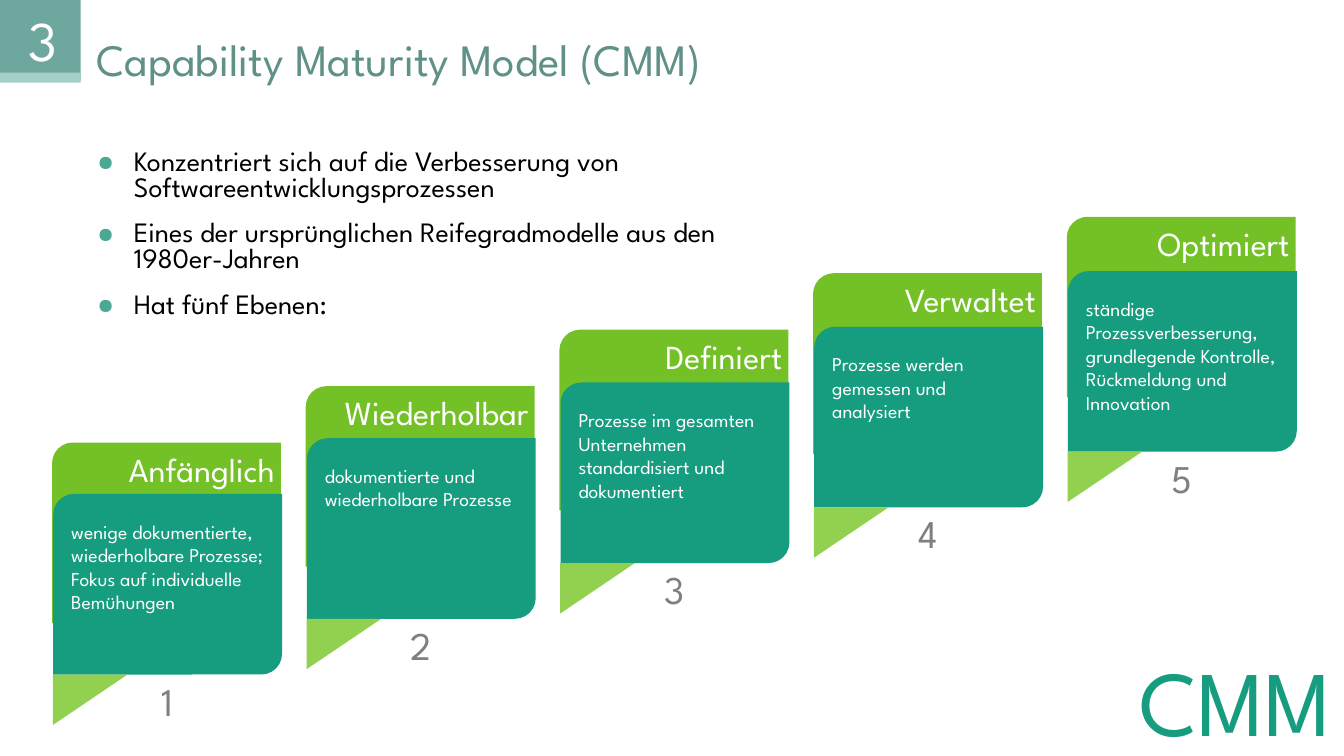
from dataclasses import dataclass

from lxml.etree import SubElement
from pptx import Presentation
from pptx.dml.color import RGBColor
from pptx.enum.shapes import MSO_SHAPE as Preset
from pptx.enum.text import MSO_ANCHOR as Anchor, MSO_AUTO_SIZE as AutoSize, PP_ALIGN as Align
from pptx.oxml.ns import qn
from pptx.shapes.autoshape import Shape
from pptx.text.text import TextFrame
from pptx.util import Length, Pt

FONT = "League Spartan"
COLORS = {
    "white": "FFFFFF", "black": "000000", "gray": "808080",
    "green": "73C027", "teal": "169C7F", "lime": "92D050",
    "title": "609188", "badge": "6EA79D", "badge_edge": "A4CFC8", "bullet": "4BA895",
}
CARD_WIDTH, CARD_HEIGHT = 163.5, 129
CORNER = 0.115
STEP_X, STEP_Y = 181.2, 40.32
DETAIL_STEP_Y = 39.8


@dataclass(frozen=True)
class Level:
    name: str
    detail: str
    detail_width: float = 152
    detail_height: float = 92


@dataclass(frozen=True)
class TextStyle:
    size: float
    color: str
    align: Align = Align.LEFT
    line_spacing: float | Length = 1.0
    space_after: float = 0


LEVELS = [
    Level("Anfänglich", "wenige dokumentierte, wiederholbare Prozesse; "
          "Fokus auf individuelle Bemühungen", detail_height=109),
    Level("Wiederholbar", "dokumentierte und wiederholbare Prozesse", detail_height=58),
    Level("Definiert", "Prozesse im gesamten Unternehmen standardisiert und dokumentiert"),
    Level("Verwaltet", "Prozesse werden gemessen und analysiert", detail_height=58),
    Level("Optimiert", "ständige Prozessverbesserung, grundlegende Kontrolle, "
          "Rückmeldung und Innovation", 157, 109),
]
POINTS = [
    "Konzentriert sich auf die Verbesserung von Softwareentwicklungsprozessen",
    "Eines der ursprünglichen Reifegradmodelle aus den 1980er-Jahren",
    "Hat fünf Ebenen:",
]

NAME = TextStyle(24, "white", Align.RIGHT)
DETAIL = TextStyle(14, "white", space_after=14)
NUMBER = TextStyle(28, "gray", Align.CENTER)
POINT = TextStyle(20, "black", line_spacing=Pt(18.6), space_after=14)
TITLE = TextStyle(32, "title")
BADGE = TextStyle(40, "white", Align.CENTER)
ACRONYM = TextStyle(66, "teal", Align.RIGHT)


def rgb(name: str) -> RGBColor:
    return RGBColor.from_string(COLORS[name])


def write(frame: TextFrame, texts: list[str], style: TextStyle) -> None:
    for index, text in enumerate(texts):
        para = frame.paragraphs[0] if index == 0 else frame.add_paragraph()
        para.alignment = style.align
        para.line_spacing = style.line_spacing
        para.space_before = Pt(0)
        para.space_after = Pt(style.space_after)
        span = para.add_run()
        span.text = text
        span.font.name = FONT
        span.font.size = Pt(style.size)
        span.font.color.rgb = rgb(style.color)


def set_insets(frame: TextFrame, left: float, top: float, right: float, bottom: float) -> None:
    frame.margin_left, frame.margin_top = Pt(left), Pt(top)
    frame.margin_right, frame.margin_bottom = Pt(right), Pt(bottom)


def add_block(shapes, preset: Preset, left: float, top: float, width: float, height: float,
              fill: str | None) -> Shape:
    block = shapes.add_shape(preset, Pt(left), Pt(top), Pt(width), Pt(height))
    block.shadow.inherit = False
    block.line.fill.background()
    if fill:
        block.fill.solid()
        block.fill.fore_color.rgb = rgb(fill)
    else:
        block.fill.background()
    return block


def add_card(shapes, left: float, top: float, fill: str) -> Shape:
    card = add_block(shapes, Preset.ROUND_2_DIAG_RECTANGLE, left, top,
                     CARD_WIDTH, CARD_HEIGHT, fill)
    card.adjustments[0], card.adjustments[1] = CORNER, 0
    return card


def add_text(shapes, text: str, style: TextStyle, left: float, top: float, width: float,
             height: float, wrap: bool = True, grow: bool = True) -> Shape:
    box = shapes.add_textbox(Pt(left), Pt(top), Pt(width), Pt(height))
    frame = box.text_frame
    frame.word_wrap = wrap
    frame.auto_size = AutoSize.SHAPE_TO_FIT_TEXT if grow else AutoSize.NONE
    write(frame, [text], style)
    return box


def add_level(page, index: int, level: Level) -> None:
    """Draw one stair: the name card behind, and the grouped detail card in front."""
    name_card = add_card(page.shapes, 37.2 + index * STEP_X, 316.1 - index * STEP_Y, "green")
    frame = name_card.text_frame
    frame.vertical_anchor = Anchor.TOP
    set_insets(frame, 7.2, 0, 0, 3.6)
    write(frame, [level.name], NAME)

    left, top = 38 + index * STEP_X, 352.8 - index * DETAIL_STEP_Y
    group = page.shapes.add_group_shape().shapes
    add_card(group, left, top, "teal")
    tail = add_block(group, Preset.RIGHT_TRIANGLE, left + 8.4, top + 120.4, 36, 53.3, "lime")
    tail.rotation = 90
    add_text(group, level.detail, DETAIL, left + 5.8, top + 14.7,
             level.detail_width, level.detail_height)
    add_text(group, str(index + 1), NUMBER, left + 66.4, top + 127.2, 30, 41, wrap=False)


def add_points(page) -> None:
    table = page.shapes.add_table(1, 1, Pt(38), Pt(93.6), Pt(497.5), Pt(129)).table
    table.first_row = table.horz_banding = False
    cell = table.cell(0, 0)
    cell.fill.background()
    set_insets(cell, 21.6, 14.4, 21.6, 14.4)
    write(cell.text_frame, POINTS, POINT)
    for para in cell.text_frame.paragraphs:
        properties = para._p.get_or_add_pPr()
        properties.set("marL", str(Pt(36)))
        properties.set("indent", str(Pt(-26)))
        color = SubElement(properties, qn("a:buClr"))
        SubElement(color, qn("a:srgbClr"), val=COLORS["bullet"])
        SubElement(properties, qn("a:buSzPct"), val="75000")
        SubElement(properties, qn("a:buChar"), char="●")


def add_badge(page) -> None:
    add_block(page.shapes, Preset.RECTANGLE, 0, 0, 57.6, 57.6, "badge")
    add_block(page.shapes, Preset.RECTANGLE, 0, 51.9, 57.6, 7.2, "badge_edge")
    circle = add_block(page.shapes, Preset.OVAL, 2, -0.7, 57.6, 57.6, None)
    circle.text_frame.vertical_anchor = Anchor.MIDDLE
    write(circle.text_frame, ["3"], BADGE)


def main() -> None:
    deck = Presentation()
    deck.slide_width, deck.slide_height = Pt(960), Pt(540)
    page = deck.slides.add_slide(deck.slide_layouts[6])
    add_points(page)
    for index, level in enumerate(LEVELS):
        add_level(page, index, level)
    add_text(page.shapes, "Capability Maturity Model (CMM)", TITLE, 62, 19.4, 541, 46, wrap=False)
    add_badge(page)
    acronym = add_text(page.shapes, "CMM", ACRONYM, 710, 466, 248.5, 67.5, grow=False)
    acronym.text_frame.vertical_anchor = Anchor.MIDDLE
    deck.save("out.pptx")


if __name__ == "__main__":
    main()
